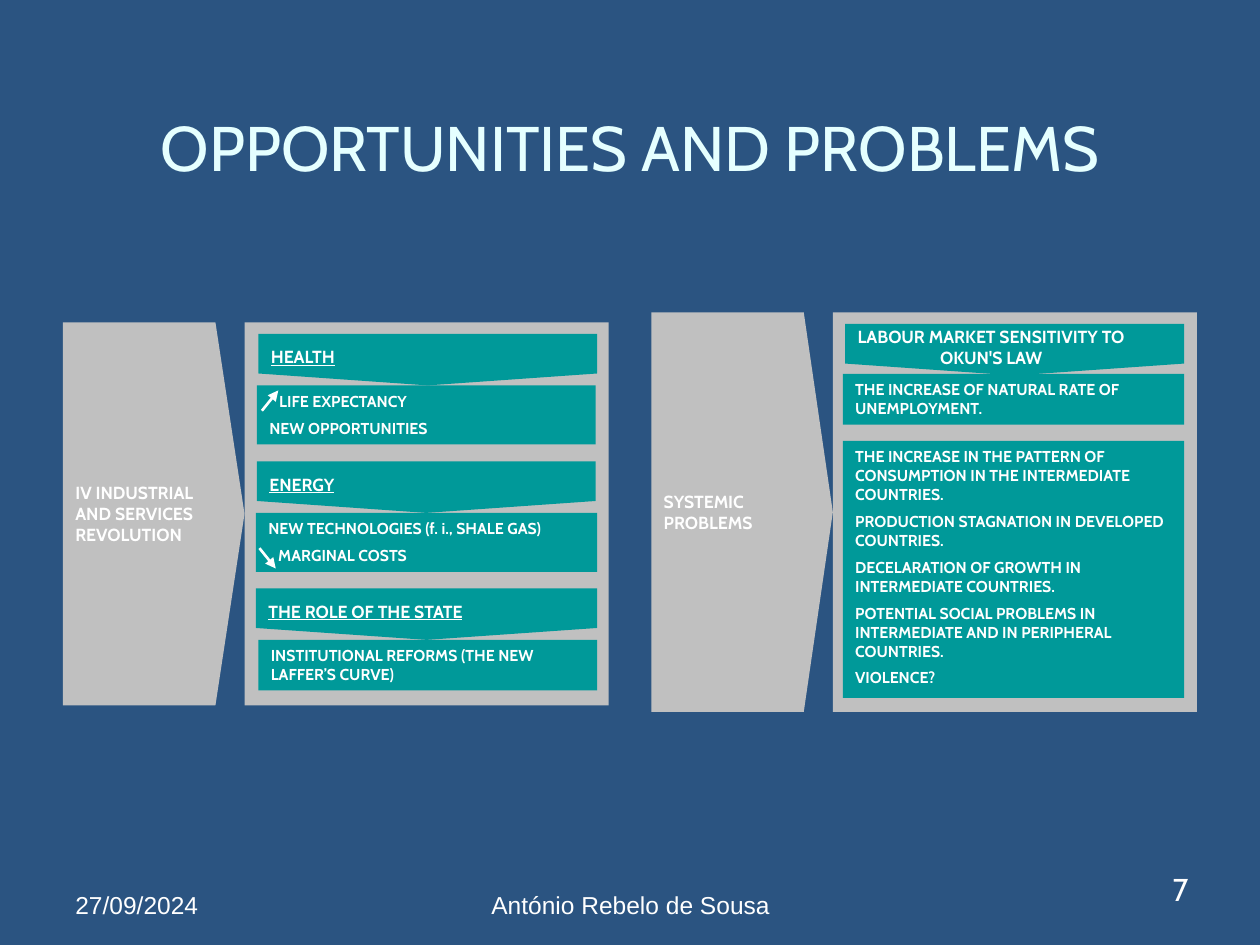
from lxml.etree import SubElement
from pptx import Presentation
from pptx.dml.color import RGBColor
from pptx.enum.shapes import MSO_CONNECTOR, MSO_SHAPE
from pptx.enum.text import MSO_ANCHOR, PP_ALIGN
from pptx.oxml.ns import qn
from pptx.util import Cm, Pt

NAVY = RGBColor(0x2B, 0x54, 0x81)
ICE = RGBColor(0xE5, 0xFF, 0xFF)
WHITE = RGBColor(0xFF, 0xFF, 0xFF)
GRAY = RGBColor(0xC0, 0xC0, 0xC0)
TEAL = RGBColor(0x00, 0x99, 0x99)

TITLE = "OPPORTUNITIES AND PROBLEMS"
LABELS = [
    ("27/09/2024", (1.27, 17.35, 5.92, 1.32), 14, "Arial", WHITE, PP_ALIGN.LEFT, MSO_ANCHOR.BOTTOM, True),
    ("António Rebelo de Sousa", (8.69, 17.35, 8.05, 1.32), 14, "Arial", WHITE, PP_ALIGN.CENTER, MSO_ANCHOR.BOTTOM, True),
    ("7", (23.37, 17.42, 0.86, 1.02), 18, "Cabin", WHITE, PP_ALIGN.CENTER, MSO_ANCHOR.TOP, False),
    (TITLE, (1.27, 1.04, 22.86, 3.81), 36, "Cabin", ICE, PP_ALIGN.CENTER, MSO_ANCHOR.MIDDLE, True),
]
PANELS = [
    ("IV INDUSTRIAL AND SERVICES REVOLUTION", 1.27, 6.5, 7.72),
    ("SYSTEMIC\vPROBLEMS", 13.13, 6.3, 8.05),
]
BANNERS = [
    ("HEALTH", 5.21, 6.73, 6.83, True),
    ("ENERGY", 5.18, 9.3, 6.83, True),
    ("THE ROLE OF THE STATE", 5.16, 11.86, 6.88, True),
    ("LABOUR MARKET SENSITIVITY TO OKUN'S LAW", 17.04, 6.53, 6.83, False),
]
BODIES = [
    (["LIFE EXPECTANCY", "NEW OPPORTUNITIES"], 5.18, 7.77, 6.83, 1.19),
    (["NEW TECHNOLOGIES (f. i., SHALE GAS)", "MARGINAL COSTS"], 5.16, 10.34, 6.88, 1.19),
    (["INSTITUTIONAL REFORMS (THE NEW LAFFER’S CURVE)"], 5.21, 12.9, 6.83, 1.02),
    (["THE INCREASE OF NATURAL RATE OF UNEMPLOYMENT."], 16.99, 7.54, 6.88, 1.02),
    (["THE INCREASE IN THE PATTERN OF CONSUMPTION IN THE INTERMEDIATE COUNTRIES.",
      "PRODUCTION STAGNATION IN DEVELOPED COUNTRIES.",
      "DECELARATION OF GROWTH IN INTERMEDIATE COUNTRIES.",
      "POTENTIAL SOCIAL PROBLEMS IN INTERMEDIATE AND IN PERIPHERAL COUNTRIES.",
      "VIOLENCE?"], 16.99, 8.89, 6.88, 5.18),
]
INDENTED = {"LIFE EXPECTANCY", "MARGINAL COSTS"}
ARROWS = [(5.28, 8.28, 5.61, 7.87), (5.23, 11.05, 5.56, 11.46)]
ARROW_W, PANEL_W, BANNER_H = 3.66, 7.34, 1.04


def set_font(p, size, color=WHITE, name="Cabin", bold=None):
    p.font.size, p.font.name, p.font.bold = Pt(size), name, bold
    p.font.color.rgb = color


def write(sp, lines, size, align=PP_ALIGN.LEFT, anchor=MSO_ANCHOR.MIDDLE):
    tf = sp.text_frame
    tf.word_wrap = True
    tf.vertical_anchor = anchor
    for i, line in enumerate(lines):
        p = tf.add_paragraph() if i else tf.paragraphs[0]
        p.text = line
        p.alignment = align
        if i:
            p.space_before = Pt(size / 2)
        if line in INDENTED:
            p._p.get_or_add_pPr().set("indent", str(Cm(0.2)))
        set_font(p, size, bold=True)
    return tf


def add_block(s, kind, left, top, width, height, color):
    sp = s.shapes.add_shape(kind, Cm(left), Cm(top), Cm(width), Cm(height))
    sp.shadow.inherit = False
    sp.fill.solid()
    sp.fill.fore_color.rgb = color
    sp.line.fill.background()
    return sp


def add_label(s, text, box, size, name, color, align, anchor, wrap):
    tf = s.shapes.add_textbox(*map(Cm, box)).text_frame
    tf.word_wrap = wrap
    tf.vertical_anchor = anchor
    p = tf.paragraphs[0]
    p.text = text
    p.alignment = align
    set_font(p, size, color, name)


def add_panel(s, text, left, top, height):
    sp = add_block(s, MSO_SHAPE.PENTAGON, left, top, ARROW_W, height, GRAY)
    sp.adjustments[0] = 0.16
    write(sp, [text], 10)
    add_block(s, MSO_SHAPE.RECTANGLE, left + ARROW_W, top, PANEL_W, height, GRAY)


def add_banner(s, text, left, top, width, underline):
    shift = (width - BANNER_H) / 2
    sp = add_block(s, MSO_SHAPE.PENTAGON, left + shift, top - shift, BANNER_H, width, TEAL)
    sp.adjustments[0] = 0.23
    sp.rotation = 90
    sp._element.spPr.find(qn("a:xfrm")).set("flipV", "1")
    tf = write(sp, [text], 10, PP_ALIGN.CENTER)
    tf._txBody.bodyPr.set("vert", "eaVert")
    tf.paragraphs[0].font.underline = underline


def add_arrow(s, *ends):
    line = s.shapes.add_connector(MSO_CONNECTOR.STRAIGHT, *map(Cm, ends))
    line.line.color.rgb = WHITE
    line.line.width = Pt(1.5)
    SubElement(line.line._get_or_add_ln(), qn("a:tailEnd"), type="triangle")
    SubElement(line._element.spPr, qn("a:effectLst"))


def main():
    prs = Presentation()
    prs.slide_width, prs.slide_height = Cm(25.4), Cm(19.05)
    s = prs.slides.add_slide(prs.slide_layouts[6])
    s.background.fill.solid()
    s.background.fill.fore_color.rgb = NAVY
    for label in LABELS:
        add_label(s, *label)
    for panel in PANELS:
        add_panel(s, *panel)
    for banner in BANNERS:
        add_banner(s, *banner)
    for lines, *box in BODIES:
        sp = add_block(s, MSO_SHAPE.RECTANGLE, *box, TEAL)
        write(sp, lines, 9, anchor=MSO_ANCHOR.TOP)
    for ends in ARROWS:
        add_arrow(s, *ends)
    prs.save("out.pptx")


if __name__ == "__main__":
    main()
